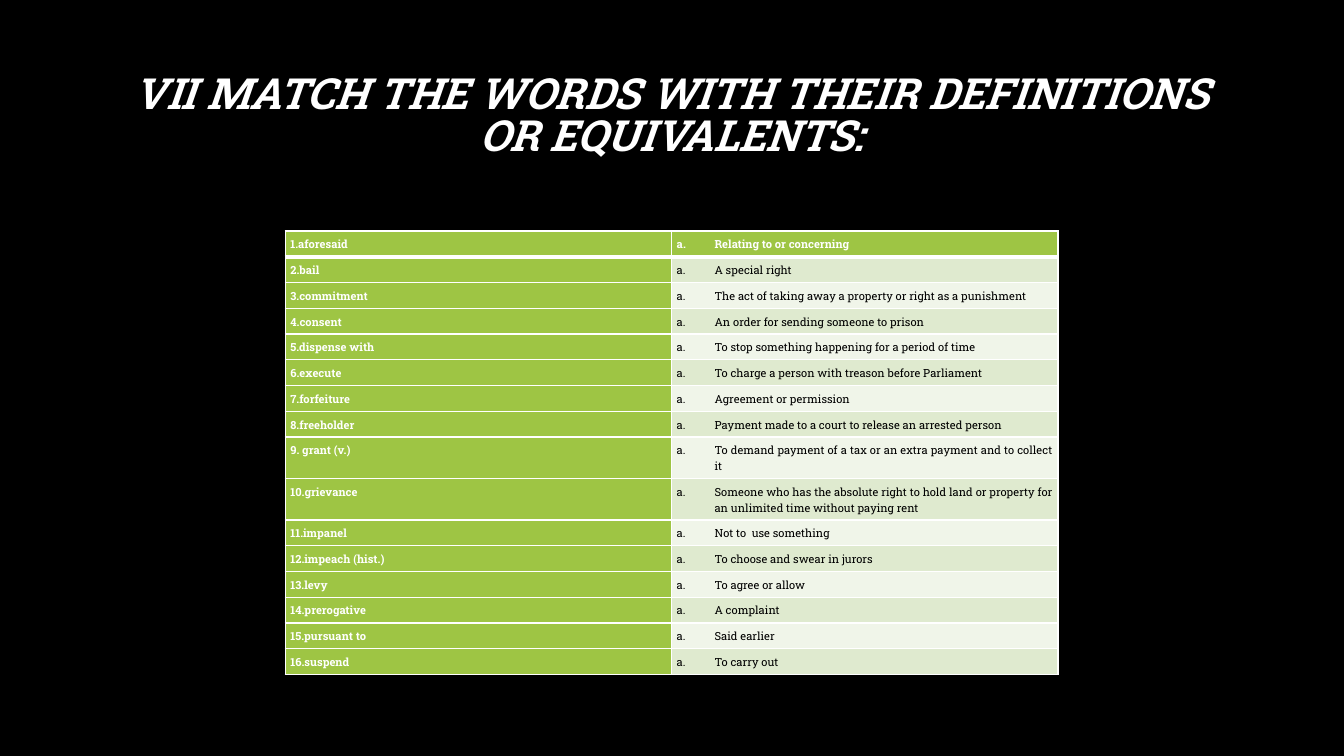
"""Build a slide with a two-column word matching exercise."""
import dataclasses

import lxml.etree
import pptx
import pptx.dml.color
import pptx.enum.text
import pptx.oxml.ns
import pptx.util

Pt = pptx.util.Pt
Align = pptx.enum.text.PP_ALIGN
Anchor = pptx.enum.text.MSO_ANCHOR
qn = pptx.oxml.ns.qn


@dataclasses.dataclass(frozen=True)
class Theme:
    font: str = "Roboto Slab"
    background: str = "000000"
    light: str = "FFFFFF"
    dark: str = "000000"
    green: str = "9EC544"
    bands: tuple = ("F0F5E9", "DFEACF")
    title_size: float = 30.6
    cell_size: float = 8


THEME = Theme()
TITLE = "VII MATCH THE WORDS WITH THEIR DEFINITIONS OR EQUIVALENTS:"
ENTRIES = [
    ("1.aforesaid", "Relating to or concerning"),
    ("2.bail", "A special right"),
    ("3.commitment", "The act of taking away a property or right as a punishment"),
    ("4.consent", "An order for sending someone to prison"),
    ("5.dispense with", "To stop something happening for a period of time"),
    ("6.execute", "To charge a person with treason before Parliament"),
    ("7.forfeiture", "Agreement or permission"),
    ("8.freeholder", "Payment made to a court to release an arrested person"),
    ("9. grant (v.)", "To demand payment of a tax or an extra payment and to collect it"),
    ("10.grievance", "Someone who has the absolute right to hold land or property "
                     "for an unlimited time without paying rent"),
    ("11.impanel", "Not to  use something"),
    ("12.impeach (hist.)", "To choose and swear in jurors"),
    ("13.levy", "To agree or allow"),
    ("14.prerogative", "A complaint"),
    ("15.pursuant to", "Said earlier"),
    ("16.suspend", "To carry out"),
]
TWO_LINE_ROWS = (8, 9)
COLUMN_WIDTH, ROW_HEIGHT, TALL_ROW_HEIGHT = 276, 18.4, 29.6
INSET, LETTER_INDENT = 3.6, 27
THIN, THICK = 1, 3


def colour(value):
    return pptx.dml.color.RGBColor.from_string(value)


def apply(target, values):
    for name, value in values.items():
        setattr(target, name, value)


def write(frame, text, size, ink, alignment, spacing, **style):
    para = frame.paragraphs[0]
    apply(para, {"alignment": alignment, "line_spacing": spacing})
    span = para.add_run()
    span.text = text
    apply(span.font, {"name": THEME.font, "size": Pt(size), **style})
    span.font.color.rgb = colour(ink)
    return para


def add_letter(para):
    properties = para._p.get_or_add_pPr()
    properties.set("marL", str(Pt(LETTER_INDENT)))
    properties.set("indent", str(-Pt(LETTER_INDENT)))
    lxml.etree.SubElement(properties, qn("a:buAutoNum"), type="alphaLcPeriod")


def add_borders(cell, top, bottom):
    properties = cell._tc.get_or_add_tcPr()
    for side, width in (("L", THIN), ("R", THIN), ("T", top), ("B", bottom)):
        line = lxml.etree.SubElement(properties, qn(f"a:ln{side}"), w=str(Pt(width)))
        fill = lxml.etree.SubElement(line, qn("a:solidFill"))
        lxml.etree.SubElement(fill, qn("a:srgbClr"), val=THEME.light)


def fill_cell(cell, row, column, text):
    strong = row == 0 or column == 0
    margins = ("margin_left", "margin_top", "margin_right", "margin_bottom")
    apply(cell, dict.fromkeys(margins, Pt(INSET)))
    add_borders(cell, THICK if row == 1 else THIN, THICK if row == 0 else THIN)
    cell.fill.solid()
    cell.fill.fore_color.rgb = colour(THEME.green if strong else THEME.bands[row % 2])
    para = write(cell.text_frame, text, THEME.cell_size,
                 THEME.light if strong else THEME.dark,
                 Align.JUSTIFY, 1.07, bold=strong)
    if column == 1:
        add_letter(para)


def add_title(page):
    box = page.shapes.add_textbox(Pt(72), Pt(48.2), Pt(815), Pt(104.4))
    frame = box.text_frame
    apply(frame, {"word_wrap": True, "vertical_anchor": Anchor.MIDDLE,
                  "margin_bottom": Pt(36)})
    write(frame, TITLE, THEME.title_size, THEME.light, Align.CENTER, 0.81,
          bold=True, italic=True)


def add_word_table(page):
    heights = [TALL_ROW_HEIGHT if row in TWO_LINE_ROWS else ROW_HEIGHT
               for row in range(len(ENTRIES))]
    table = page.shapes.add_table(len(ENTRIES), 2, Pt(203.8), Pt(165),
                                  Pt(2 * COLUMN_WIDTH), Pt(sum(heights))).table
    apply(table, {"first_row": False, "horz_banding": False})
    for column in table.columns:
        column.width = Pt(COLUMN_WIDTH)
    for row, (entry, height) in enumerate(zip(ENTRIES, heights)):
        table.rows[row].height = Pt(height)
        for column, text in enumerate(entry):
            fill_cell(table.cell(row, column), row, column, text)


def main():
    deck = pptx.Presentation()
    apply(deck, {"slide_width": Pt(960), "slide_height": Pt(540)})
    page = deck.slides.add_slide(deck.slide_layouts[6])
    page.background.fill.solid()
    page.background.fill.fore_color.rgb = colour(THEME.background)
    add_title(page)
    add_word_table(page)
    deck.save("out.pptx")


if __name__ == "__main__":
    main()
